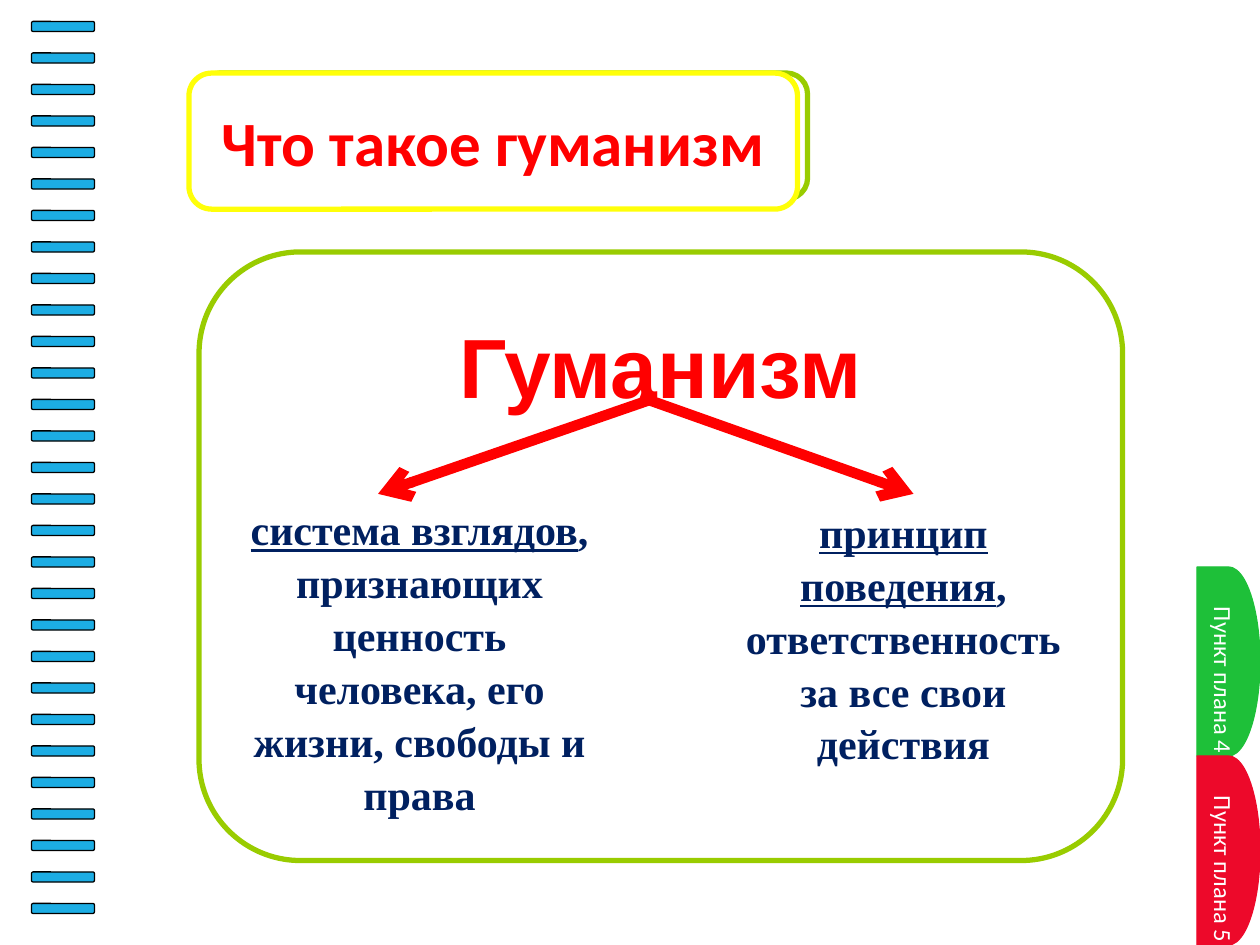
"""Build the slide that explains what humanism is."""
import pptx
import pptx.dml.color
import pptx.enum.shapes
import pptx.enum.text
import pptx.util
from lxml import etree
from pptx.oxml.ns import qn

Inches = pptx.util.Inches
Pt = pptx.util.Pt
SHAPE = pptx.enum.shapes.MSO_SHAPE
ANCHOR = pptx.enum.text.MSO_ANCHOR
CENTER = pptx.enum.text.PP_ALIGN.CENTER

RED, WHITE, NAVY, GREEN = "FF0000", "FFFFFF", "002060", "99CC00"
TITLE = "Что такое гуманизм"
TITLE_BOX = (1.5, 0.58, 4.83, 1.08)
TERM = "Гуманизм"
TABS = [("Пункт плана 4", "1EC039"), ("Пункт плана 5", "ED092A")]
MEANINGS = [
    ("система взглядов", ", признающих ценность человека, его жизни, свободы и права",
     (1.83, 3.93, 3, 2.52)),
    ("принцип поведения", ", ответственность за все свои действия",
     (5.67, 3.95, 3, 2.12)),
]
ARROWS = [(5.17, 3.17, 3, 3.92), (5.08, 3.15, 7.25, 3.92)]
RING_COUNT, RING_TOP, RING_STEP = 29, 0.17, 0.25
TAB_TOP, TAB_HEIGHT = 4.5, 1.5


def color(hex_value):
    return pptx.dml.color.RGBColor.from_string(hex_value)


def inches(values):
    return [Inches(value) for value in values]


def add_box(slide, kind, box, fill, line, width=0.75):
    shape = slide.shapes.add_shape(kind, *inches(box))
    shape.shadow.inherit = False
    shape.fill.solid()
    shape.fill.fore_color.rgb = color(fill)
    shape.line.color.rgb = color(line)
    shape.line.width = Pt(width)
    return shape


def format_text(paragraph, font_name, size, hex_value, bold=True):
    paragraph.alignment = CENTER
    for run in paragraph.runs:
        run.font.name = font_name
        run.font.size = Pt(size)
        run.font.bold = bold
        run.font.color.rgb = color(hex_value)


def add_rings(slide):
    for index in range(RING_COUNT):
        box = (0.25, RING_TOP + index * RING_STEP, 0.5, 0.08)
        add_box(slide, SHAPE.FLOWCHART_ALTERNATE_PROCESS, box, "1CADE4", "000000")


def add_tabs(slide):
    for index, (label, fill) in enumerate(TABS):
        box = (9.5, TAB_TOP + index * TAB_HEIGHT, 0.5, TAB_HEIGHT)
        frame = add_box(slide, SHAPE.FLOWCHART_DELAY, box, fill, fill).text_frame
        frame.text = label
        frame.word_wrap = False
        frame.vertical_anchor = ANCHOR.MIDDLE
        frame._txBody.bodyPr.set("vert", "eaVert")
        paragraph = frame.paragraphs[0]
        format_text(paragraph, "Calibri", 14, WHITE, bold=False)
        paragraph._p.get_or_add_pPr().set("rtl", "1")


def add_term(slide):
    panel = add_box(slide, SHAPE.ROUNDED_RECTANGLE, (1.58, 2, 7.33, 4.83), WHITE, GREEN, 3)
    frame = panel.text_frame
    frame.text = TERM
    frame.vertical_anchor = ANCHOR.TOP
    frame.margin_top = Inches(0.26)
    format_text(frame.paragraphs[0], "Arial", 48, RED)


def add_title(slide):
    add_box(slide, SHAPE.ROUNDED_RECTANGLE, TITLE_BOX, WHITE, "FFFF09", 3)
    title = slide.shapes.title
    title.left, title.top, title.width, title.height = inches(TITLE_BOX)
    title.text_frame.text = TITLE
    title.text_frame.word_wrap = False
    title.text_frame.vertical_anchor = ANCHOR.MIDDLE
    format_text(title.text_frame.paragraphs[0], "Calibri", 36, RED)
    slide.shapes._spTree.append(title._element)


def add_arrow(slide, ends):
    arrow = slide.shapes.add_connector(
        pptx.enum.shapes.MSO_CONNECTOR.STRAIGHT, *inches(ends))
    arrow.line.color.rgb = color(RED)
    arrow.line.width = Pt(6)
    etree.SubElement(arrow.line._get_or_add_ln(), qn("a:tailEnd"), type="arrow")
    etree.SubElement(arrow._element.spPr, qn("a:effectLst"))


def add_meaning(slide, key, rest, box):
    frame = slide.shapes.add_textbox(*inches(box)).text_frame
    frame.word_wrap = True
    paragraph = frame.paragraphs[0]
    paragraph.line_spacing = 1.05
    for text, underline in ((key, True), (rest, False)):
        run = paragraph.add_run()
        run.text = text
        run.font.underline = underline
    format_text(paragraph, "Times New Roman", 24, NAVY)


def main():
    presentation = pptx.Presentation()
    presentation.slide_width, presentation.slide_height = inches((10, 7.5))
    slide = presentation.slides.add_slide(presentation.slide_layouts[5])
    add_rings(slide)
    add_box(slide, SHAPE.ROUNDED_RECTANGLE, (1.58, 0.58, 4.83, 1), WHITE, GREEN, 3)
    add_tabs(slide)
    add_term(slide)
    add_title(slide)
    for ends in ARROWS:
        add_arrow(slide, ends)
    for meaning in MEANINGS:
        add_meaning(slide, *meaning)
    presentation.save("out.pptx")


if __name__ == "__main__":
    main()
